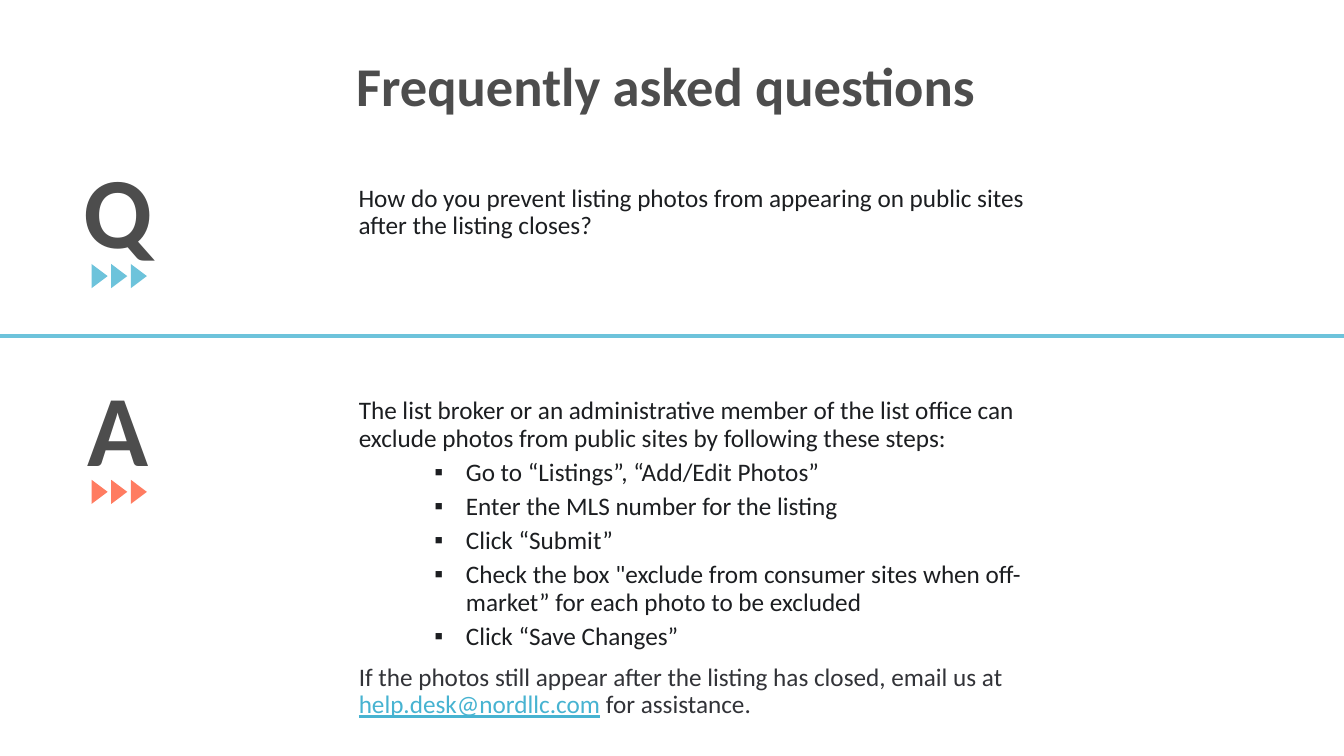
"""Build a question-and-answer slide."""
from dataclasses import dataclass

from lxml import etree
from pptx import Presentation
from pptx import util as u
from pptx.dml import color
from pptx.enum import shapes, text
from pptx.oxml import ns

FONT = "Calibri"
GREY, INK, SLATE = "4D4D4D", "1C1E21", "323338"
BLUE, CORAL, LINK = "6DC3DB", "FF7C61", "47B3D1"
PAGE_WIDTH, PAGE_HEIGHT = 960, 540
RULE_TOP = 240
ARROW_LEFT, ARROW_PITCH, ARROW_WIDTH, ARROW_HEIGHT = 62.5, 14, 17.3, 11.5


@dataclass
class Span:
    words: str
    ink: str = INK
    underline: bool = False


@dataclass
class Para:
    spans: list[Span]
    before: float = 0
    bullet: bool = False
    size: float = 18
    bold: bool = False
    spacing: float = 0.9
    centred: bool = False


@dataclass
class Block:
    left: float
    top: float
    width: float
    height: float
    paras: list[Para]


@dataclass
class Arrows:
    top: float
    fill: str


def rgb(value: str) -> color.RGBColor:
    return color.RGBColor.from_string(value)


def letter(words: str) -> list[Para]:
    return [Para([Span(words, GREY)], size=72, bold=True, spacing=1)]


def step(words: str) -> Para:
    return Para([Span(words)], before=5, bullet=True)


BLOCKS = [
    Block(52, 39, 847, 55.5, [
        Para([Span("Frequently asked questions", GREY)], size=39, bold=True, centred=True),
    ]),
    Block(52.5, 102.2, 40.3, 94.3, letter("Q")),
    Block(55.4, 257.8, 63.4, 94.3, letter("A")),
    Block(249, 128.9, 522.5, 74, [
        Para([Span("How do you prevent listing photos from appearing on public sites "
                   "after the listing closes?")]),
    ]),
    Block(249.2, 280.8, 522, 212.4, [
        Para([Span("The list broker or an administrative member of the list office can "
                   "exclude photos from public sites by following these steps:")]),
        step("Go to “Listings”, “Add/Edit Photos”"),
        step("Enter the MLS number for the listing"),
        step("Click “Submit”"),
        step("Check the box \"exclude from consumer sites when off-market” "
             "for each photo to be excluded"),
        step("Click “Save Changes”"),
        Para([
            Span("If the photos still appear after the listing has closed, email us at ", SLATE),
            Span("help.desk@nordllc.com", LINK, True),
            Span(" for assistance.", SLATE),
        ], before=10),
    ]),
]
ARROWS = [Arrows(191.5, BLUE), Arrows(345.6, CORAL)]


def add_bullet(paragraph) -> None:
    paragraph.level = 1
    properties = paragraph._p.get_or_add_pPr()
    properties.set("marL", str(u.Pt(76.5)))
    properties.set("indent", str(u.Pt(-22.5)))
    etree.SubElement(properties, ns.qn("a:buFont")).set("typeface", "Arial")
    etree.SubElement(properties, ns.qn("a:buChar")).set("char", "▪")


def fill_para(paragraph, para: Para) -> None:
    paragraph.line_spacing = para.spacing
    if para.before:
        paragraph.space_before = u.Pt(para.before)
    if para.centred:
        paragraph.alignment = text.PP_ALIGN.CENTER
    if para.bullet:
        add_bullet(paragraph)
    font = paragraph.font
    font.name, font.size, font.bold = FONT, u.Pt(para.size), para.bold
    uniform = len(para.spans) == 1
    if uniform:
        font.color.rgb = rgb(para.spans[0].ink)
    for span in para.spans:
        run = paragraph.add_run()
        run.text = span.words
        if not uniform:
            run.font.color.rgb = rgb(span.ink)
        if span.underline:
            run.font.underline = True


def add_block(page, block: Block) -> None:
    box = page.shapes.add_textbox(u.Pt(block.left), u.Pt(block.top),
                                  u.Pt(block.width), u.Pt(block.height))
    frame = box.text_frame
    frame.word_wrap = True
    for index, para in enumerate(block.paras):
        fill_para(frame.add_paragraph() if index else frame.paragraphs[0], para)


def add_arrows(page, arrows: Arrows) -> None:
    group = page.shapes.add_group_shape()
    for index in range(3):
        arrow = group.shapes.add_shape(
            shapes.MSO_SHAPE.ISOSCELES_TRIANGLE,
            u.Pt(ARROW_LEFT + index * ARROW_PITCH), u.Pt(arrows.top),
            u.Pt(ARROW_WIDTH), u.Pt(ARROW_HEIGHT))
        arrow.rotation = 90
        arrow.shadow.inherit = False
        arrow.fill.solid()
        arrow.fill.fore_color.rgb = rgb(arrows.fill)
        arrow.line.fill.background()


def add_rule(page) -> None:
    rule = page.shapes.add_connector(shapes.MSO_CONNECTOR.STRAIGHT, u.Pt(0), u.Pt(RULE_TOP),
                                     u.Pt(PAGE_WIDTH), u.Pt(RULE_TOP))
    rule.line.color.rgb = rgb(BLUE)
    rule.line.width = u.Pt(2.25)
    etree.SubElement(rule._element.spPr, ns.qn("a:effectLst"))


def main() -> None:
    deck = Presentation()
    deck.slide_width, deck.slide_height = u.Pt(PAGE_WIDTH), u.Pt(PAGE_HEIGHT)
    page = deck.slides.add_slide(deck.slide_layouts[6])
    for block in BLOCKS:
        add_block(page, block)
    add_rule(page)
    for arrows in ARROWS:
        add_arrows(page, arrows)
    deck.save("out.pptx")


if __name__ == "__main__":
    main()
